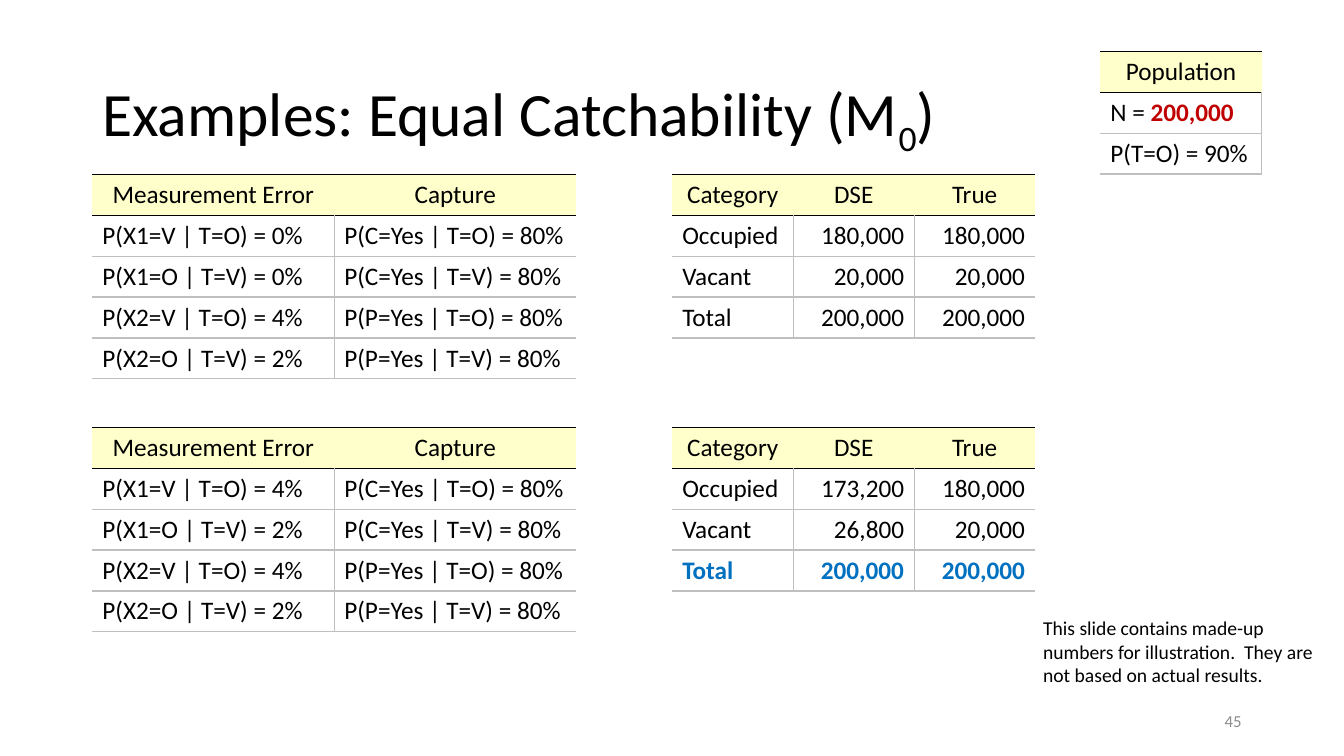
from dataclasses import dataclass

from lxml import etree
from pptx import Presentation
from pptx import util as u
from pptx.dml.color import RGBColor
from pptx.enum import text as t
from pptx.oxml import ns

Pt = u.Pt
LEFT, MID, RIGHT = t.PP_ALIGN.LEFT, t.PP_ALIGN.CENTER, t.PP_ALIGN.RIGHT


@dataclass(frozen=True)
class Theme:
    font: str = "Calibri"
    ink: str = "000000"
    head: str = "FFFFCC"
    grid: str = "BFBFBF"
    red: str = "C00000"
    blue: str = "0070C0"
    gray: str = "8C8C8C"
    title: int = 44
    body: int = 18
    note: int = 14
    page: int = 12
    row: float = 29.2
    plain: str = "{2D5ABB26-0587-4C30-8999-92F81FD0307C}"


LOOK = Theme()


def write(frame, *runs, size=LOOK.body, color=LOOK.ink, bold=False,
          align=LEFT, lead=None):
    """Fill one paragraph; a run is a string or (string, format changes)."""
    para = frame.paragraphs[0]
    para.alignment = align
    if lead:
        para.line_spacing = lead
    for item in runs:
        words, diff = (item, {}) if isinstance(item, str) else item
        run = para.add_run()
        run.text = words
        font = run.font
        font.name, font.size = LOOK.font, Pt(size)
        font.bold = diff.get("bold", bold)
        font.color.rgb = RGBColor.from_string(diff.get("color", color))
        if "base" in diff:
            run._r.get_or_add_rPr().set("baseline", str(diff["base"] * 1000))


def label(slide, box, *runs, anchor=t.MSO_ANCHOR.MIDDLE, **form):
    frame = slide.shapes.add_textbox(*map(Pt, box)).text_frame
    frame.word_wrap = True
    frame.vertical_anchor = anchor
    write(frame, *runs, **form)


def edge(cell, side, color):
    line = etree.SubElement(cell._tc.get_or_add_tcPr(), ns.qn("a:ln" + side),
                            w=str(Pt(1)))
    fill = etree.SubElement(line, ns.qn("a:solidFill"))
    etree.SubElement(fill, ns.qn("a:srgbClr"), val=color)


def rule(cell, row, col, cols):
    """Black lines around the head row, gray ones in the body."""
    if row and col:
        edge(cell, "L", LOOK.grid)
    if row and (col < cols - 1 or cols == 1):
        edge(cell, "R", LOOK.grid)
    edge(cell, "T", LOOK.ink if row < 2 else LOOK.grid)
    edge(cell, "B", LOOK.grid if row else LOOK.ink)


def table(slide, box, rows, nums=False, mark=None):
    """Draw rows in box (left, top, width); mark colours the last row."""
    left, top, width = box
    high, cols = len(rows), len(rows[0])
    frame = slide.shapes.add_table(high, cols, Pt(left), Pt(top), Pt(width),
                                   Pt(LOOK.row * high))
    grid = frame.table
    grid.first_row = grid.horz_banding = False
    grid._tbl.tblPr.find(ns.qn("a:tableStyleId")).text = LOOK.plain
    for col in grid.columns:
        col.width = Pt(width / cols)
    for r, line in enumerate(rows):
        grid.rows[r].height = Pt(LOOK.row)
        for c, value in enumerate(line):
            cell = grid.cell(r, c)
            rule(cell, r, c, cols)
            digit = nums and r > 0 and c > 0
            if r == 0:
                cell.fill.solid()
                cell.fill.fore_color.rgb = RGBColor.from_string(LOOK.head)
            else:
                cell.fill.background()
            if r == 0 or digit:
                cell.vertical_anchor = t.MSO_ANCHOR.MIDDLE
            last = mark and r == high - 1
            runs = [value] if isinstance(value, str) else value
            write(cell.text_frame, *runs, bold=bool(last),
                  color=mark if last else LOOK.ink,
                  align=MID if r == 0 else RIGHT if digit else LEFT)


def case(slide, box, rates, counts, mark=None):
    """One example: error and capture rates beside the resulting counts."""
    left, top, width = box
    events = [("X1", "V", "O"), ("X1", "O", "V"),
              ("X2", "V", "O"), ("X2", "O", "V")]
    rows = [("Measurement Error", "Capture")]
    for (name, seen, true), rate in zip(events, rates):
        list_ = "C" if name == "X1" else "P"
        rows.append((f"P({name}={seen} | T={true}) = {rate}%",
                     f"P({list_}=Yes | T={true}) = 80%"))
    table(slide, (left, top, 345.6), rows)
    heads = [("Category", "DSE", "True")]
    table(slide, (left + width - 259.2, top, 259.2), heads + counts,
          nums=True, mark=mark)


def main():
    deck = Presentation()
    deck.slide_width, deck.slide_height = Pt(960), Pt(540)
    slide = deck.slides.add_slide(deck.slide_layouts[6])

    # Title and page number
    label(slide, (66, 28.75, 828, 104.4), "Examples: Equal Catchability (M",
          ("0", {"base": -25}), ")", size=LOOK.title, lead=0.9)
    label(slide, (678, 500.5, 216, 28.75), "45", size=LOOK.page,
          color=LOOK.gray, align=RIGHT)

    # Population
    size = ["N = ", ("200,000", {"color": LOOK.red, "bold": True})]
    table(slide, (786, 36.7, 115.2), [["Population"], [size], ["P(T=O) = 90%"]])

    # Two examples
    total = ("Total", "200,000", "200,000")
    case(slide, (66, 124.6, 673.4), (0, 0, 4, 2),
         [("Occupied", "180,000", "180,000"),
          ("Vacant", "20,000", "20,000"), total])
    case(slide, (66, 305.3, 673.4), (4, 2, 4, 2),
         [("Occupied", "173,200", "180,000"),
          ("Vacant", "26,800", "20,000"), total], mark=LOOK.blue)

    # Note
    label(slide, (738, 436.5, 211, 58.2),
          "This slide contains made-up numbers for illustration.  "
          "They are not based on actual results.",
          size=LOOK.note, anchor=t.MSO_ANCHOR.TOP)

    deck.save("out.pptx")


if __name__ == "__main__":
    main()
